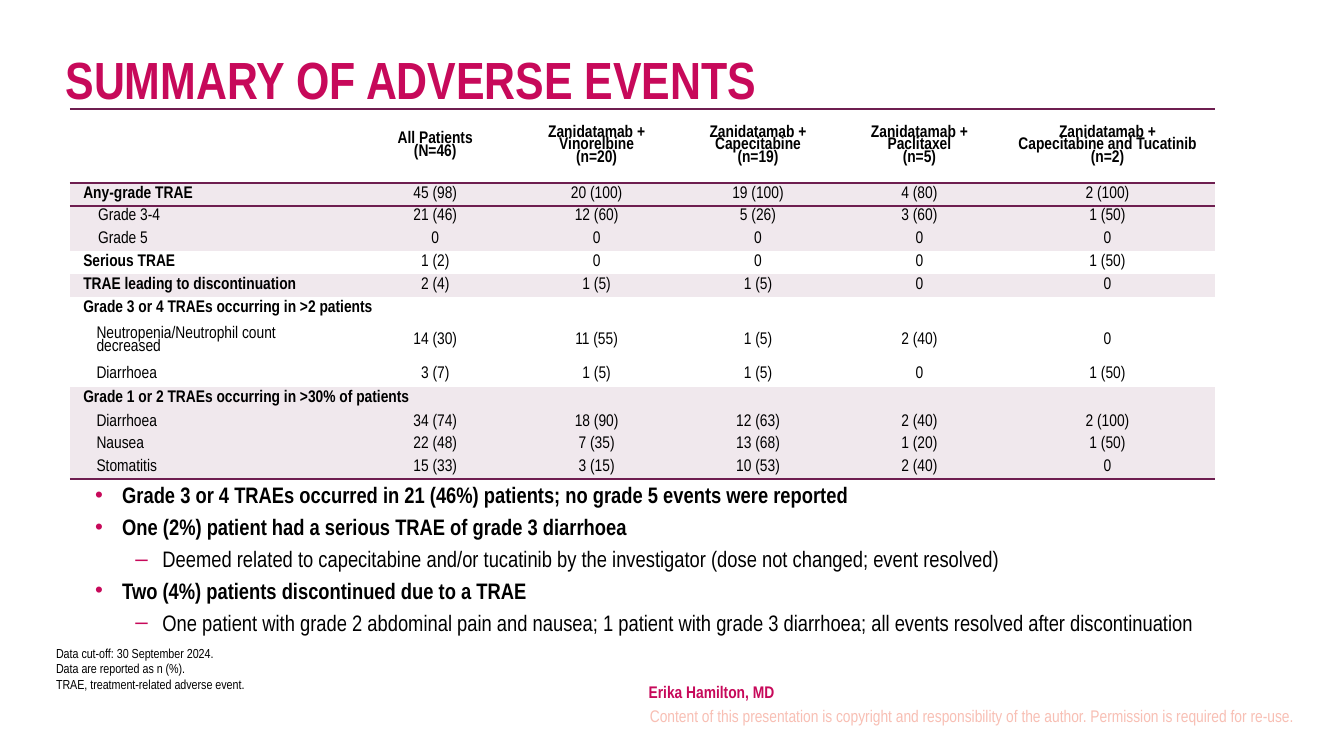
from dataclasses import dataclass

from lxml import etree
from pptx import Presentation
from pptx import util as u
from pptx.dml.color import RGBColor
from pptx.enum import text
from pptx.oxml import ns


@dataclass(frozen=True)
class Theme:
    font: str = "Arial Narrow"
    ink: str = "000000"
    accent: str = "C7095A"
    rule: str = "6E1E50"
    band: str = "F0E8ED"
    plain: str = "FFFFFF"
    faded: str = "F8BFB4"
    title_size: float = 28
    body_size: float = 12
    small_size: float = 9
    note_size: float = 7


THEME = Theme()
CENTER = text.PP_ALIGN.CENTER
MIDDLE = text.MSO_ANCHOR.MIDDLE
NO_STYLE = "{2D5ABB26-0587-4C30-8999-92F81FD0307C}"

COLUMN_WIDTHS = [5.38, 3.05, 3.05, 3.05, 3.05, 4.06]
HEADER_HEIGHT = 1.4
ROW_HEIGHT = 0.43
TALL_ROWS = {7: 0.79, 8: 0.48}
PLAIN_ROWS = {0, 4, 6, 7, 8}
SPANS = {6: 3, 9: 1}

HEADERS = [
    "",
    "All Patients\n(N=46)",
    "Zanidatamab + Vinorelbine\n(n=20)",
    "Zanidatamab + Capecitabine\n(n=19)",
    "Zanidatamab + Paclitaxel\n(n=5)",
    "Zanidatamab +\nCapecitabine and Tucatinib (n=2)",
]
EVENTS = [
    (0, "Any-grade TRAE", "45 (98)", "20 (100)", "19 (100)", "4 (80)", "2 (100)"),
    (0.28, "Grade 3-4", "21 (46)", "12 (60)", "5 (26)", "3 (60)", "1 (50)"),
    (0.28, "Grade 5", "0", "0", "0", "0", "0"),
    (0, "Serious TRAE", "1 (2)", "0", "0", "0", "1 (50)"),
    (0, "TRAE leading to discontinuation", "2 (4)", "1 (5)", "1 (5)", "0", "0"),
    (0, "Grade 3 or 4 TRAEs occurring in >2 patients", "", "", "", "", ""),
    (0.25, "Neutropenia/Neutrophil count decreased",
     "14 (30)", "11 (55)", "1 (5)", "2 (40)", "0"),
    (0.25, "Diarrhoea", "3 (7)", "1 (5)", "1 (5)", "0", "1 (50)"),
    (0, "Grade 1 or 2 TRAEs occurring in >30% of patients", "", "", "", "", ""),
    (0.25, "Diarrhoea", "34 (74)", "18 (90)", "12 (63)", "2 (40)", "2 (100)"),
    (0.25, "Nausea", "22 (48)", "7 (35)", "13 (68)", "1 (20)", "1 (50)"),
    (0.25, "Stomatitis", "15 (33)", "3 (15)", "10 (53)", "2 (40)", "0"),
]
FINDINGS = [
    (0, "Grade 3 or 4 TRAEs occurred in 21 (46%) patients; no grade 5 events were reported"),
    (0, "One (2%) patient had a serious TRAE of grade 3 diarrhoea"),
    (1, "Deemed related to capecitabine and/or tucatinib by the investigator "
        "(dose not changed; event resolved)"),
    (0, "Two (4%) patients discontinued due to a TRAE"),
    (1, "One patient with grade 2 abdominal pain and nausea; 1 patient with grade 3 "
        "diarrhoea; all events resolved after discontinuation"),
]
FOOTNOTES = ("Data cut-off: 30 September 2024.\nData are reported as n (%).\n"
             "TRAE, treatment-related adverse event.")
COPYRIGHT = ("Content of this presentation is copyright and responsibility of the author. "
             "Permission is required for re-use.")


def add_child(parent, tag, **attributes):
    child = etree.SubElement(parent, ns.qn(tag))
    for name, value in attributes.items():
        child.set(name, str(value))
    return child


def style_para(para, size, color=THEME.ink, bold=False):
    for span in para.runs:
        span.font.name = THEME.font
        span.font.size = u.Pt(size)
        span.font.bold = bold
        span.font.color.rgb = RGBColor.from_string(color)


def indent_para(para, left, first=0):
    properties = para._p.get_or_add_pPr()
    properties.set("marL", str(u.Cm(left)))
    properties.set("indent", str(u.Cm(first)))
    return properties


def add_text(page, place, words, size, color=THEME.ink, bold=False, margins=None):
    box = page.shapes.add_textbox(*(u.Cm(length) for length in place))
    frame = box.text_frame
    frame.word_wrap = True
    if margins:
        (frame.margin_left, frame.margin_top,
         frame.margin_right, frame.margin_bottom) = (u.Cm(side) for side in margins)
    frame.text = words
    for para in frame.paragraphs:
        style_para(para, size, color, bold)
    return frame


def add_findings(page, place):
    words = "\n".join(words for level, words in FINDINGS)
    frame = add_text(page, place, words, THEME.body_size)
    for index, (para, (level, _)) in enumerate(zip(frame.paragraphs, FINDINGS)):
        if index:
            para.space_before = u.Pt(2.7)
        para.level = level
        properties = indent_para(para, 0.76 * (level + 1), -0.51)
        bullet_color = add_child(properties, "a:buClr")
        add_child(bullet_color, "a:srgbClr", val=THEME.accent)
        add_child(properties, "a:buFont", typeface="Arial")
        add_child(properties, "a:buChar", char="–" if level else "•")
        style_para(para, THEME.body_size, bold=level == 0)


def add_border(cell, side):
    line = add_child(cell._tc.get_or_add_tcPr(), side, w=u.Pt(1))
    fill = add_child(line, "a:solidFill")
    add_child(fill, "a:srgbClr", val=THEME.rule)


def fill_cell(cell, words, row, column, indent, last_row):
    is_header = row == 0
    cell.text = words
    cell.vertical_anchor = MIDDLE
    cell.margin_top = cell.margin_bottom = u.Cm(0.13 if is_header else 0.03)
    for para in cell.text_frame.paragraphs:
        para.line_spacing = 0.8
        if column:
            para.alignment = CENTER
        elif indent:
            indent_para(para, indent)
        style_para(para, THEME.small_size,
                   bold=is_header or (column == 0 and not indent))
        if not words:
            add_child(para._p, "a:endParaRPr", sz=int(THEME.small_size * 100))
    if row in (0, 1):
        add_border(cell, "a:lnT")
    if row in (0, last_row):
        add_border(cell, "a:lnB")
    cell.fill.solid()
    cell.fill.fore_color.rgb = RGBColor.from_string(
        THEME.plain if row in PLAIN_ROWS else THEME.band)


def add_event_table(page, left, top):
    rows = [(0, *HEADERS), *EVENTS]
    heights = [HEADER_HEIGHT] + [TALL_ROWS.get(row, ROW_HEIGHT)
                                 for row in range(1, len(rows))]
    holder = page.shapes.add_table(len(rows), len(COLUMN_WIDTHS), u.Cm(left), u.Cm(top),
                                   u.Cm(sum(COLUMN_WIDTHS)), u.Cm(sum(heights)))
    table = holder.table
    table.first_row = table.horz_banding = False
    for style in holder.element.iter(ns.qn("a:tableStyleId")):
        style.text = NO_STYLE
    for column, width in zip(table.columns, COLUMN_WIDTHS):
        column.width = u.Cm(width)
    for row, (indent, *entries) in enumerate(rows):
        table.rows[row].height = u.Cm(heights[row])
        for column, words in enumerate(entries):
            fill_cell(table.cell(row, column), words, row, column, indent, len(rows) - 1)
    for row, last_column in SPANS.items():
        table.cell(row, 0).merge(table.cell(row, last_column))


def main():
    deck = Presentation()
    deck.slide_width, deck.slide_height = u.Cm(25.4), u.Cm(14.29)
    page = deck.slides.add_slide(deck.slide_layouts[6])

    rights = add_text(page, (12.17, 13.34, 12.52, 0.41), COPYRIGHT, THEME.small_size,
                      THEME.faded, margins=(0, 0, 0.25, 0))
    rights.paragraphs[0].alignment = text.PP_ALIGN.RIGHT

    add_event_table(page, 1.32, 2.06)
    add_findings(page, (1.3, 8.97, 22.45, 3.4))

    title = add_text(page, (0.99, 0.99, 23.37, 1.19), "SUMMARY OF ADVERSE EVENTS",
                     THEME.title_size, THEME.accent, bold=True)
    title.paragraphs[0].line_spacing = 0.8

    author = add_text(page, (11.63, 12.83, 7.77, 0.48), "Erika Hamilton, MD",
                      THEME.small_size, THEME.accent, bold=True, margins=(0, 0, 0, 0))
    author.vertical_anchor = MIDDLE
    indent_para(author.paragraphs[0], 1.27, -0.64)

    add_text(page, (0.81, 12.07, 22.96, 1.14), FOOTNOTES, THEME.note_size)
    deck.save("out.pptx")


if __name__ == "__main__":
    main()
